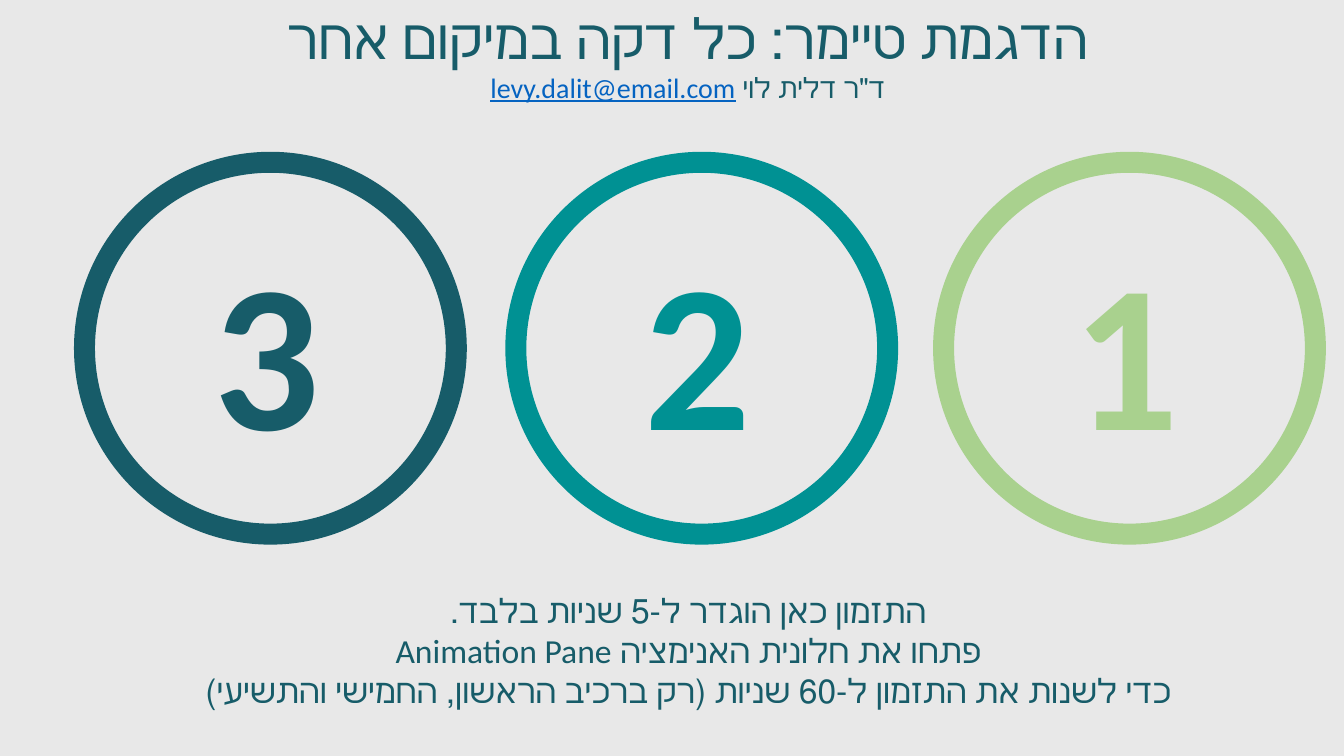
from pptx import Presentation
from pptx.dml.color import RGBColor
from pptx.enum.shapes import MSO_SHAPE
from pptx.enum.text import MSO_ANCHOR, MSO_AUTO_SIZE, PP_ALIGN
from pptx.util import Cm, Pt

BACKGROUND = RGBColor(0xE8, 0xE8, 0xE8)
PETROL = RGBColor(0x17, 0x5C, 0x69)
TEAL = RGBColor(0x00, 0x91, 0x93)
GREEN = RGBColor(0xA9, 0xD1, 0x8E)
LINK_BLUE = RGBColor(0x05, 0x63, 0xC1)
FONT = "Calibri"

RING_TOP, RING_SIZE = 4.09, 9.37
RINGS = [("3", 2.13, PETROL), ("2", 13, TEAL), ("1", 23.78, GREEN)]
INSTRUCTIONS = [
    "התזמון כאן הוגדר ל-5 שניות בלבד.",
    "פתחו את חלונית האנימציה Animation Pane",
    "כדי לשנות את התזמון ל-60 שניות (רק ברכיב הראשון, החמישי והתשיעי)",
]


def add_run(paragraph, text, size, color, **extra):
    run = paragraph.add_run()
    run.text = text
    run.font.color.rgb = color
    for name, value in {"name": FONT, "size": Pt(size), **extra}.items():
        setattr(run.font, name, value)


def fill_rtl_lines(frame, lines):
    """Write centred right-to-left paragraphs; each line is a list of (text, size, color, extra) runs."""
    for index, runs in enumerate(lines):
        paragraph = frame.add_paragraph() if index else frame.paragraphs[0]
        paragraph.alignment = PP_ALIGN.CENTER
        paragraph._p.get_or_add_pPr().set("rtl", "1")
        for text, size, color, extra in runs:
            add_run(paragraph, text, size, color, **extra)


def format_frame(frame):
    settings = {
        "word_wrap": True,
        "auto_size": MSO_AUTO_SIZE.SHAPE_TO_FIT_TEXT,
        "vertical_anchor": MSO_ANCHOR.TOP,
    }
    for name, value in settings.items():
        setattr(frame, name, value)


def add_heading(slide, left, top, width, height):
    heading = slide.shapes.title
    box = {"left": left, "top": top, "width": width, "height": height}
    for name, value in box.items():
        setattr(heading, name, Cm(value))
    format_frame(heading.text_frame)
    fill_rtl_lines(heading.text_frame, [
        [("הדגמת טיימר: כל דקה במיקום אחר", 40, PETROL, {})],
        [("ד״ר דלית לוי ", 20, PETROL, {}),
         ("levy.dalit@email.com", 20, LINK_BLUE, {"underline": True})],
    ])


def add_timer_ring(slide, left, top, size, digit, color):
    ring = slide.shapes.add_shape(MSO_SHAPE.OVAL, Cm(left), Cm(top), Cm(size), Cm(size))
    ring.shadow.inherit = False
    ring.fill.background()
    ring.line.color.rgb = color
    ring.line.width = Pt(15)

    minute = slide.shapes.add_textbox(Cm(left + 3), Cm(top + 1.35), Cm(size - 6), Cm(6.68))
    format_frame(minute.text_frame)
    add_run(minute.text_frame.paragraphs[0], digit, 150, color, bold=True)


def add_instructions(slide, left, top, width, height):
    instructions = slide.shapes.add_textbox(Cm(left), Cm(top), Cm(width), Cm(height))
    format_frame(instructions.text_frame)
    fill_rtl_lines(instructions.text_frame, [[(line, 24, PETROL, {})] for line in INSTRUCTIONS])


def main():
    deck = Presentation()
    deck.slide_width, deck.slide_height = Cm(33.87), Cm(19.05)
    slide = deck.slides.add_slide(deck.slide_layouts[5])
    slide.background.fill.solid()
    slide.background.fill.fore_color.rgb = BACKGROUND

    add_heading(slide, 6.63, -0.05, 21.41, 2.82)
    for digit, left, color in RINGS:
        add_timer_ring(slide, left, RING_TOP, RING_SIZE, digit, color)
    add_instructions(slide, 4.06, 14.73, 26.57, 3.33)
    deck.save("out.pptx")


if __name__ == "__main__":
    main()
